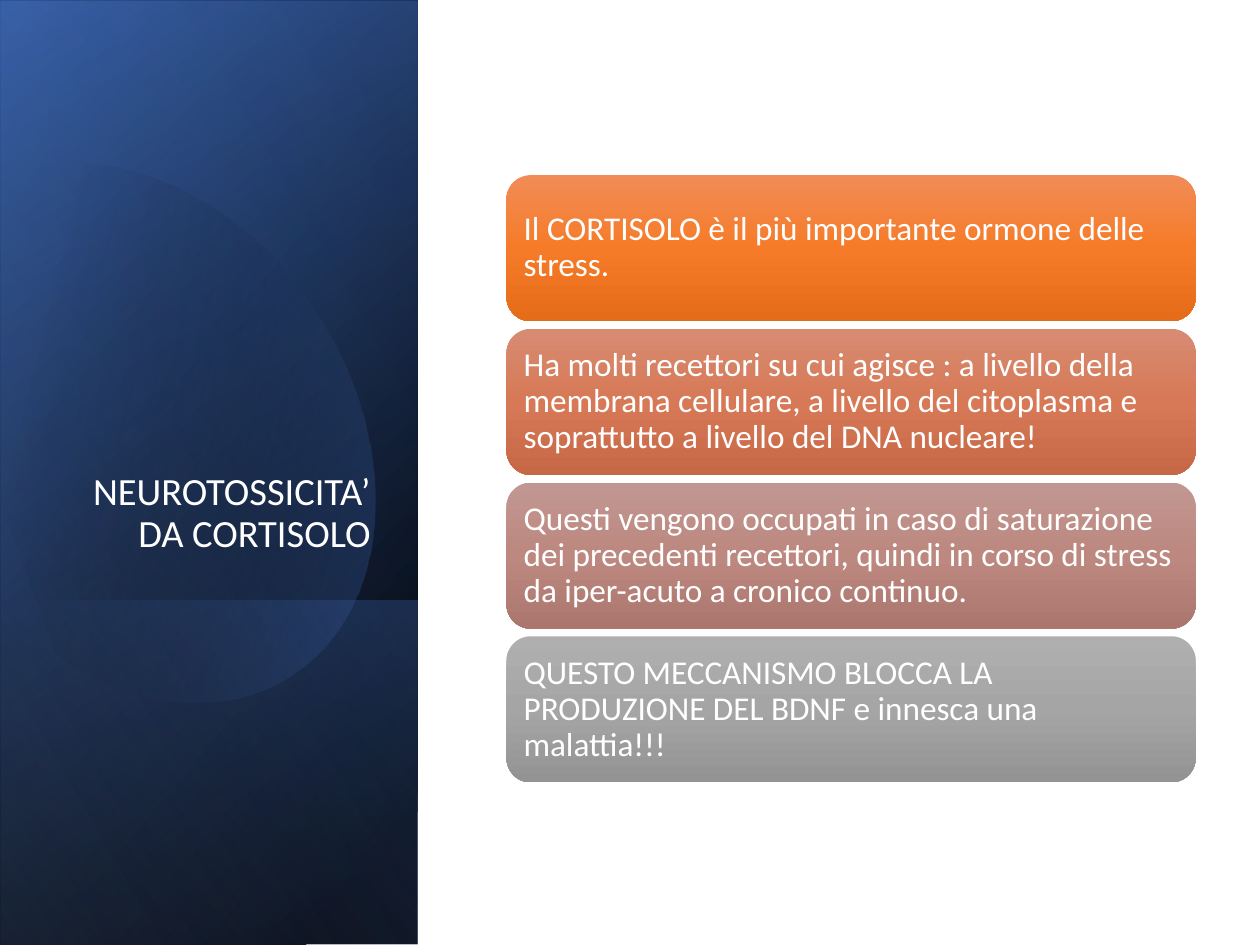
import dataclasses

import lxml.etree
import pptx
import pptx.dml.color
import pptx.enum.shapes
import pptx.enum.text
import pptx.oxml.ns
import pptx.util

Inches = pptx.util.Inches
SHAPES = pptx.enum.shapes.MSO_SHAPE
ANCHOR = pptx.enum.text.MSO_ANCHOR
ALIGN = pptx.enum.text.PP_ALIGN
qn = pptx.oxml.ns.qn


@dataclasses.dataclass(frozen=True)
class Theme:
    font: str = "Calibri"
    title_size: int = 22
    body_size: int = 19
    text: str = "FFFFFF"
    black: str = "000000"
    blue: str = "4472C4"
    deep_blue: str = "2F5597"
    pale_blue: str = "8FAADC"
    orange: tuple = ("F18C57", "F67B28", "E56C19")
    terracotta: tuple = ("D78B72", "D77956", "C66846")
    rose: tuple = ("C19791", "BC8880", "AA766E")
    gray: tuple = ("AFAFAF", "A5A5A5", "939393")


THEME = Theme()

CARDS = [
    ("Il CORTISOLO è il più importante ormone delle stress.", THEME.orange),
    ("Ha molti recettori su cui agisce : a livello della membrana cellulare, "
     "a livello del citoplasma e soprattutto a livello del DNA nucleare!", THEME.terracotta),
    ("Questi vengono occupati in caso di saturazione dei precedenti recettori, "
     "quindi in corso di stress da iper-acuto a cronico continuo.", THEME.rose),
    ("QUESTO MECCANISMO BLOCCA LA PRODUZIONE DEL BDNF e innesca una malattia!!!", THEME.gray),
]

PANEL_BOX = (-2.09, 2.09, 7.5, 3.31)
PANEL_LAYERS = [
    (PANEL_BOX, [(8, THEME.black, 100), (100, THEME.deep_blue, 100)], 50),
    ((-2.09, 2.11, 7.5, 3.31), [(0, THEME.black, 0), (99, THEME.blue, 46)], 30),
    ((0.29, 4.48, 2.74, 3.31), [(2, THEME.blue, 29), (100, THEME.black, 30)], 130),
]
PANEL_SHEEN = (PANEL_BOX, [(0, THEME.black, 0), (99, THEME.pale_blue, 11)], 120)

BLOB_START = (0.96, 1.14)
BLOB_SEGMENTS = [
    [(1.71, 1.22), (2.44, 1.92), (2.73, 2.9)],
    [(3.07, 4.12), (2.62, 5.31), (1.71, 5.57)],
    [(1.14, 5.74), (0.53, 5.5), (0.07, 5)],
    [(-0.03, 4.88)],
    [(-0.25, 1.66)],
    [(-0.15, 1.54)],
    [(0.02, 1.37), (0.22, 1.25), (0.45, 1.18)],
    [(0.62, 1.13), (0.79, 1.12), (0.96, 1.14)],
]


def style_shape(shape, stops, angle):
    shape.shadow.inherit = False
    shape.line.fill.background()
    shape.fill.background()
    properties = shape._element.spPr
    gradient = lxml.etree.SubElement(properties, qn("a:gradFill"), rotWithShape="1")
    stop_list = lxml.etree.SubElement(gradient, qn("a:gsLst"))
    for position, color, opacity in stops:
        stop = lxml.etree.SubElement(stop_list, qn("a:gs"), pos=str(position * 1000))
        color_element = lxml.etree.SubElement(stop, qn("a:srgbClr"), val=color)
        if opacity < 100:
            lxml.etree.SubElement(color_element, qn("a:alpha"), val=str(opacity * 1000))
    lxml.etree.SubElement(gradient, qn("a:lin"), ang=str(angle * 60000), scaled="0")
    properties.replace(properties.find(qn("a:noFill")), gradient)


def write_text(shape, text, *, size, align=ALIGN.LEFT, anchor=ANCHOR.MIDDLE, insets=(0.1, 0.05)):
    frame = shape.text_frame
    frame.word_wrap = True
    frame.vertical_anchor = anchor
    frame.margin_left = frame.margin_right = Inches(insets[0])
    frame.margin_top = frame.margin_bottom = Inches(insets[1])
    paragraph = frame.paragraphs[0]
    paragraph.alignment = align
    paragraph.line_spacing = 0.9
    run = paragraph.add_run()
    run.text = text
    run.font.name = THEME.font
    run.font.size = pptx.util.Pt(size)
    run.font.color.rgb = pptx.dml.color.RGBColor.from_string(THEME.text)


def add_panel_layer(slide, box, stops, angle):
    shape = slide.shapes.add_shape(SHAPES.RECTANGLE, *map(Inches, box))
    shape.rotation = 90
    shape._element.spPr.find(qn("a:xfrm")).set("flipH", "1")
    style_shape(shape, stops, angle)


def curve_points(start, controls, steps=16):
    for step in range(1, steps + 1):
        t = step / steps
        weights = ((1 - t) ** 3, 3 * t * (1 - t) ** 2, 3 * t ** 2 * (1 - t), t ** 3)
        points = (start, *controls)
        yield tuple(sum(w * p[axis] for w, p in zip(weights, points)) for axis in (0, 1))


def add_blob(slide):
    points = [BLOB_START]
    for segment in BLOB_SEGMENTS:
        points.extend(segment if len(segment) == 1 else list(curve_points(points[-1], segment)))
    scaled = [(Inches(x), Inches(y)) for x, y in points]
    builder = slide.shapes.build_freeform(*scaled[0])
    builder.add_line_segments(scaled[1:], close=True)
    shape = builder.convert_to_shape()
    shape.rotation = 343.9
    style_shape(shape, [(29, THEME.black, 0), (100, THEME.blue, 43)], 30)


def add_title(slide):
    box = slide.shapes.add_textbox(Inches(0.48), Inches(1.84), Inches(2.56), Inches(2.62))
    write_text(box, "NEUROTOSSICITA’ DA CORTISOLO", size=THEME.title_size,
               align=ALIGN.RIGHT, anchor=ANCHOR.BOTTOM)


def add_card(slide, top, text, colors):
    shape = slide.shapes.add_shape(
        SHAPES.ROUNDED_RECTANGLE, Inches(4.02), Inches(top), Inches(5.47), Inches(1.16))
    style_shape(shape, [(50 * i, color, 100) for i, color in enumerate(colors)], 90)
    write_text(shape, text, size=THEME.body_size, insets=(0.08, 0.08))


def main():
    presentation = pptx.Presentation()
    presentation.slide_width = Inches(10)
    presentation.slide_height = Inches(7.5)
    slide = presentation.slides.add_slide(presentation.slide_layouts[6])
    for layer in PANEL_LAYERS:
        add_panel_layer(slide, *layer)
    add_blob(slide)
    add_panel_layer(slide, *PANEL_SHEEN)
    add_title(slide)
    card_top, card_pitch = 1.39, 1.22
    for index, (text, colors) in enumerate(CARDS):
        add_card(slide, card_top + index * card_pitch, text, colors)
    presentation.save("out.pptx")


if __name__ == "__main__":
    main()
